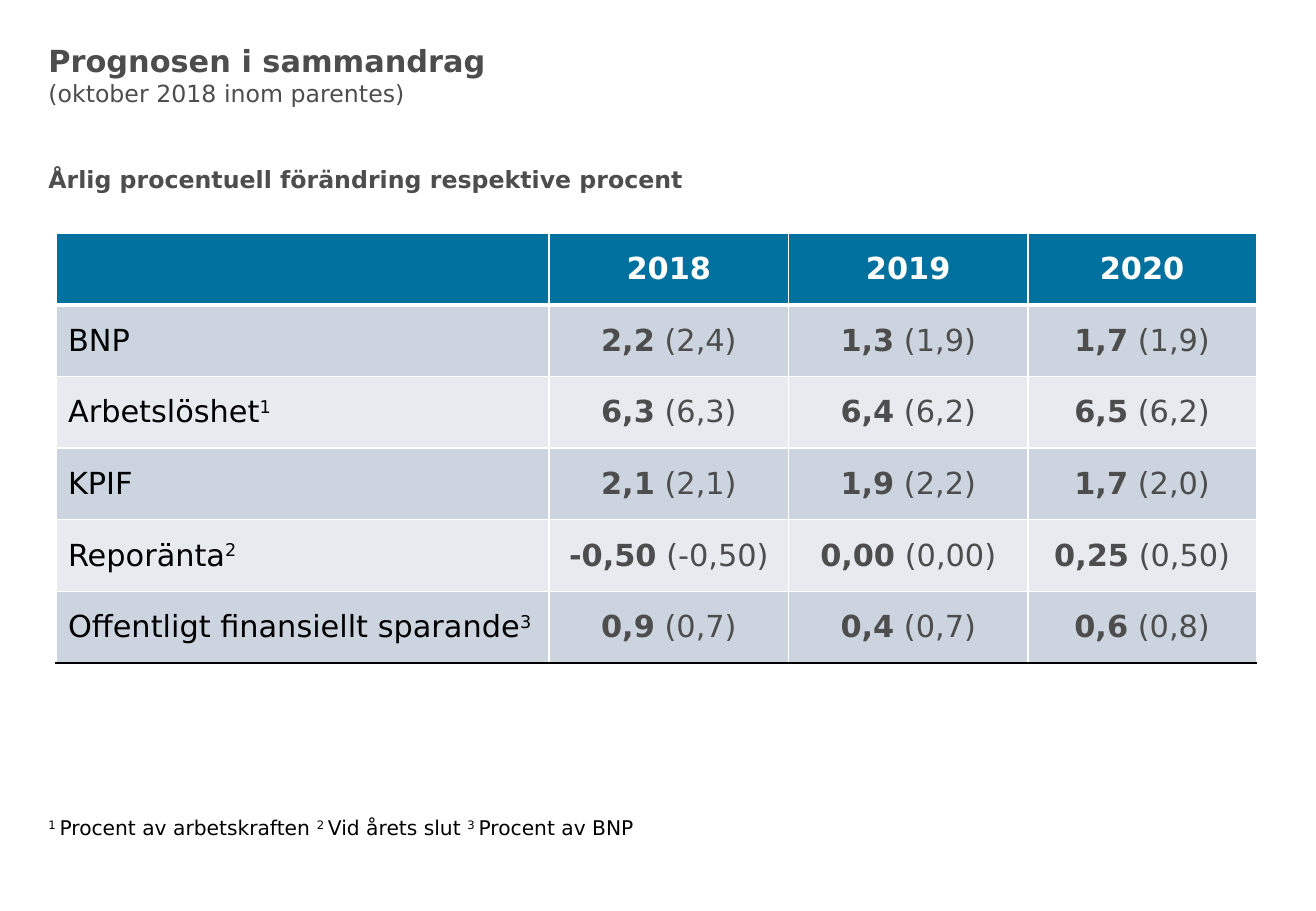
from lxml import etree
from pptx import Presentation
from pptx.dml.color import RGBColor
from pptx.enum.text import MSO_ANCHOR, PP_ALIGN
from pptx.oxml.ns import qn
from pptx.util import Inches, Pt

LEFT, CENTER = PP_ALIGN.LEFT, PP_ALIGN.CENTER
MIDDLE = MSO_ANCHOR.MIDDLE

WHITE = RGBColor(0xFF, 0xFF, 0xFF)
BLACK = RGBColor(0x00, 0x00, 0x00)
GRAY = RGBColor(0x4D, 0x4D, 0x4D)
BLUE = RGBColor(0x00, 0x70, 0x9E)
DARK_BAND = RGBColor(0xCC, 0xD5, 0xDF)
LIGHT_BAND = RGBColor(0xE7, 0xEB, 0xF0)

YEARS = ["2018", "2019", "2020"]
FORECAST = [
    ("BNP", "", [("2,2", "2,4"), ("1,3", "1,9"), ("1,7", "1,9")]),
    ("Arbetslöshet", "1", [("6,3", "6,3"), ("6,4", "6,2"), ("6,5", "6,2")]),
    ("KPIF", "", [("2,1", "2,1"), ("1,9", "2,2"), ("1,7", "2,0")]),
    ("Reporänta", "2", [("-0,50", "-0,50"), ("0,00", "0,00"), ("0,25", "0,50")]),
    ("Offentligt finansiellt sparande", "3",
     [("0,9", "0,7"), ("0,4", "0,7"), ("0,6", "0,8")]),
]
FOOTNOTES = [("1 ", "Procent av arbetskraften "), ("2 ", "Vid årets slut "),
             ("3 ", "Procent av BNP")]
COLUMN_WIDTHS = [4.06, 1.97, 1.97, 1.88]
ROW_HEIGHT = 0.59


def add_span(para, text, size=18, color=GRAY, bold=False, raised=False):
    span = para.add_run()
    span.text = text
    span.font.name = "DejaVu Sans"
    span.font.size = Pt(size)
    span.font.bold = bold
    span.font.color.rgb = color
    if raised:
        span.font._element.set("baseline", "30000")


class ForecastPage:
    """Holds the slide and draws its text boxes and forecast table."""

    def __init__(self, deck):
        self.page = deck.slides.add_slide(deck.slide_layouts[6])

    def text_box(self, left, top, width, height):
        box = self.page.shapes.add_textbox(
            Inches(left), Inches(top), Inches(width), Inches(height))
        box.text_frame.word_wrap = True
        return box.text_frame

    def table(self, left, top, widths, row_count, row_height):
        table = self.page.shapes.add_table(
            row_count, len(widths), Inches(left), Inches(top),
            Inches(sum(widths)), Inches(row_height * row_count)).table
        for column, width in zip(table.columns, widths):
            column.width = Inches(width)
        return table

    def cell(self, cell, fill, align=LEFT, top=(WHITE, 1), bottom=(WHITE, 1)):
        cell.vertical_anchor = MIDDLE
        properties = cell._tc.get_or_add_tcPr()
        side = (WHITE, 1)
        for tag, (color, width) in zip(("a:lnL", "a:lnR", "a:lnT", "a:lnB"),
                                       (side, side, top, bottom)):
            line = etree.SubElement(properties, qn(tag), w=str(Pt(width)))
            paint = etree.SubElement(line, qn("a:solidFill"))
            etree.SubElement(paint, qn("a:srgbClr"), val=str(color))
        cell.fill.solid()
        cell.fill.fore_color.rgb = fill
        para = cell.text_frame.paragraphs[0]
        para.alignment = align
        return para


def main():
    deck = Presentation()
    deck.slide_width, deck.slide_height = Inches(10.83), Inches(7.5)
    page = ForecastPage(deck)

    heading = page.text_box(0.3, 0.3, 10, 1.35)
    add_span(heading.paragraphs[0], "Prognosen i sammandrag", bold=True)
    add_span(heading.add_paragraph(), "(oktober 2018 inom parentes)", size=14)
    subtitle = heading.add_paragraph()
    subtitle.space_before = Pt(34)
    add_span(subtitle, "Årlig procentuell förändring respektive procent",
             size=14, bold=True)

    table = page.table(0.46, 1.92, COLUMN_WIDTHS, len(FORECAST) + 1, ROW_HEIGHT)
    header_rule = (WHITE, 3)
    for column, year in enumerate([""] + YEARS):
        para = page.cell(table.cell(0, column), BLUE, CENTER, bottom=header_rule)
        if year:
            add_span(para, year, color=WHITE, bold=True)
    for row, (label, note, values) in enumerate(FORECAST, 1):
        fill = DARK_BAND if row % 2 else LIGHT_BAND
        rules = {"top": header_rule if row == 1 else (WHITE, 1),
                 "bottom": (BLACK if row == len(FORECAST) else WHITE, 1)}
        para = page.cell(table.cell(row, 0), fill, **rules)
        add_span(para, label, color=BLACK)
        if note:
            add_span(para, note, color=BLACK, raised=True)
        for column, (current, previous) in enumerate(values, 1):
            para = page.cell(table.cell(row, column), fill, CENTER, **rules)
            add_span(para, current, bold=True)
            add_span(para, f" ({previous})")

    footer = page.text_box(0.3, 6.66, 9.53, 0.68).paragraphs[0]
    for number, text in FOOTNOTES:
        add_span(footer, number, size=12, color=BLACK, raised=True)
        add_span(footer, text, size=12, color=BLACK)

    deck.save("out.pptx")


if __name__ == "__main__":
    main()
